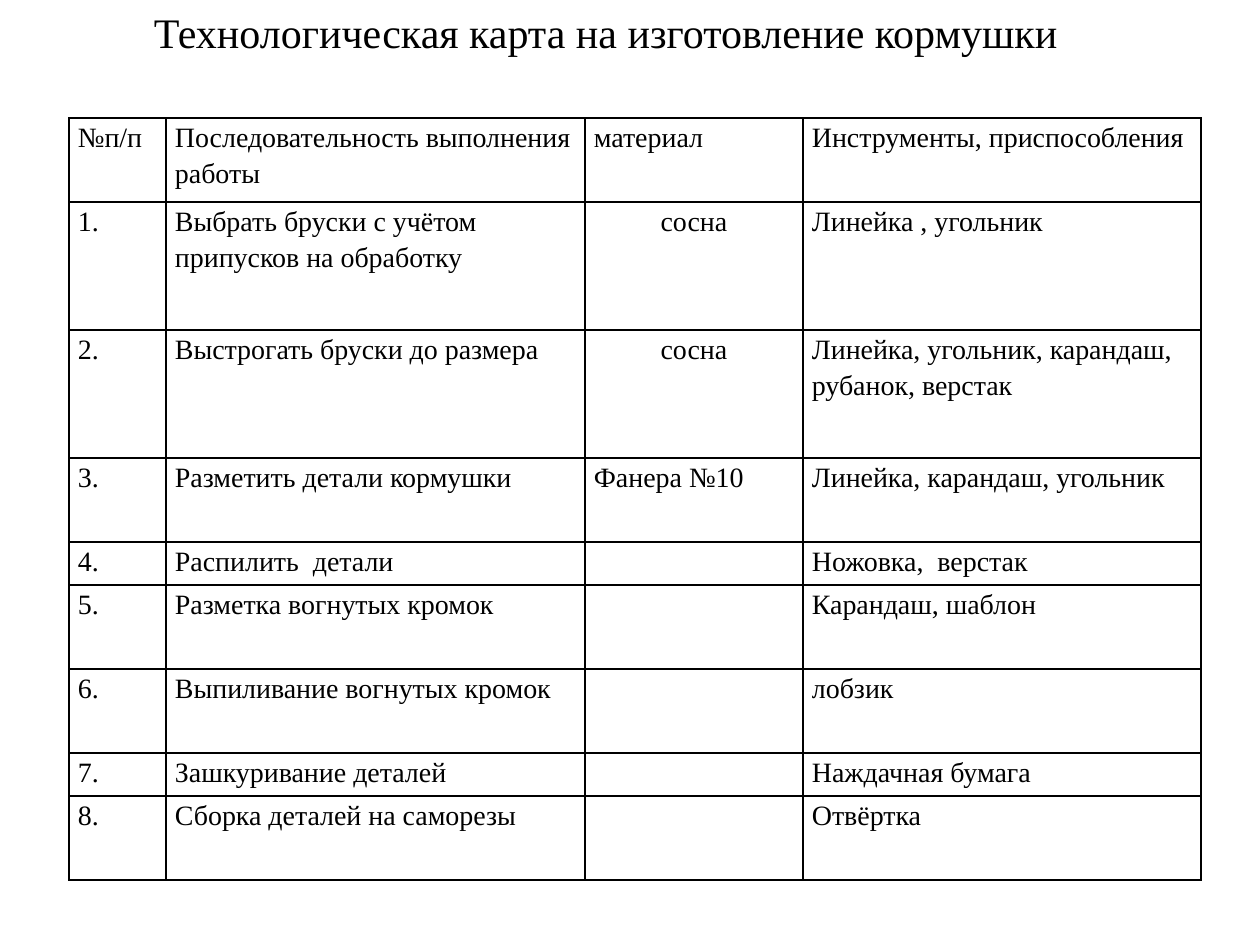
from lxml.etree import SubElement
from pptx import Presentation
from pptx.dml.color import RGBColor
from pptx.enum.text import MSO_ANCHOR, PP_ALIGN
from pptx.oxml.ns import qn
from pptx.util import Pt

EMU_PER_PX = 914400 // 126
BLACK = RGBColor(0x00, 0x00, 0x00)
FONT = "Times New Roman"

COLUMN_WIDTHS = [97, 419, 218, 398]
SHORT, MEDIUM, TALL = 43, 84, 128
HEADER = ["№п/п", "Последовательность выполнения работы", "материал",
          "Инструменты, приспособления"]
# Row height, operation, material, tools
STEPS = [
    (TALL, "Выбрать бруски с учётом припусков на обработку", "сосна", "Линейка , угольник"),
    (TALL, "Выстрогать бруски до размера", "сосна",
     "Линейка, угольник, карандаш, рубанок, верстак"),
    (MEDIUM, "Разметить детали кормушки", "Фанера №10", "Линейка, карандаш, угольник"),
    (SHORT, "Распилить  детали", "", "Ножовка,  верстак"),
    (MEDIUM, "Разметка вогнутых кромок", "", "Карандаш, шаблон"),
    (MEDIUM, "Выпиливание вогнутых кромок", "", "лобзик"),
    (SHORT, "Зашкуривание деталей", "", "Наждачная бумага"),
    (MEDIUM, "Сборка деталей на саморезы", "", "Отвёртка"),
]


def px(length):
    return length * EMU_PER_PX


class SlideBuilder:
    def __init__(self, slide, font, color):
        self.slide = slide
        self.font = font
        self.color = color

    def add_run(self, paragraph, text, size):
        run = paragraph.add_run()
        run.text = text
        run.font.name = self.font
        run.font.size = Pt(size)
        run.font.color.rgb = self.color

    def add_title(self, text, left, top, width, height, indent):
        shape = self.slide.shapes.add_textbox(px(left), px(top), px(width), px(height))
        frame = shape.text_frame
        frame.word_wrap = True
        frame.vertical_anchor = MSO_ANCHOR.MIDDLE
        frame.margin_left = px(indent)
        paragraph = frame.paragraphs[0]
        paragraph.alignment = PP_ALIGN.CENTER
        self.add_run(paragraph, text, 24)

    def add_borders(self, cell):
        properties = cell._tc.get_or_add_tcPr()
        for position, side in enumerate(("lnL", "lnR", "lnT", "lnB")):
            line = SubElement(properties, qn(f"a:{side}"), w=str(Pt(1)))
            fill = SubElement(line, qn("a:solidFill"))
            SubElement(fill, qn("a:srgbClr"), val=str(self.color))
            properties.insert(position, line)

    def fill_cell(self, cell, text, centred):
        cell.fill.background()
        cell.margin_left = cell.margin_right = px(9)
        cell.margin_top = cell.margin_bottom = 0
        self.add_borders(cell)
        if text:
            paragraph = cell.text_frame.paragraphs[0]
            paragraph.line_spacing = 1.15
            if centred:
                paragraph.alignment = PP_ALIGN.CENTER
            self.add_run(paragraph, text, 16)

    def add_table(self, rows, left, top, widths, heights, centred_text):
        shape = self.slide.shapes.add_table(len(rows), len(widths), px(left), px(top),
                                            px(sum(widths)), px(sum(heights)))
        table = shape.table
        for column, width in zip(table.columns, widths):
            column.width = px(width)
        for table_row, height, texts in zip(table.rows, heights, rows):
            table_row.height = px(height)
            for cell, text in zip(table_row.cells, texts):
                self.fill_cell(cell, text, text == centred_text)


def main():
    presentation = Presentation()
    presentation.slide_width = px(1260)
    presentation.slide_height = px(945)
    slide = presentation.slides.add_slide(presentation.slide_layouts[6])
    builder = SlideBuilder(slide, FONT, BLACK)

    builder.add_title("Технологическая карта на изготовление кормушки",
                      0, 0, 1076, 63, indent=148)
    rows = [HEADER] + [[f"{number}.", *texts]
                       for number, (_, *texts) in enumerate(STEPS, start=1)]
    heights = [MEDIUM] + [step[0] for step in STEPS]
    builder.add_table(rows, 69, 118, COLUMN_WIDTHS, heights, centred_text="сосна")

    presentation.save("out.pptx")


if __name__ == "__main__":
    main()
